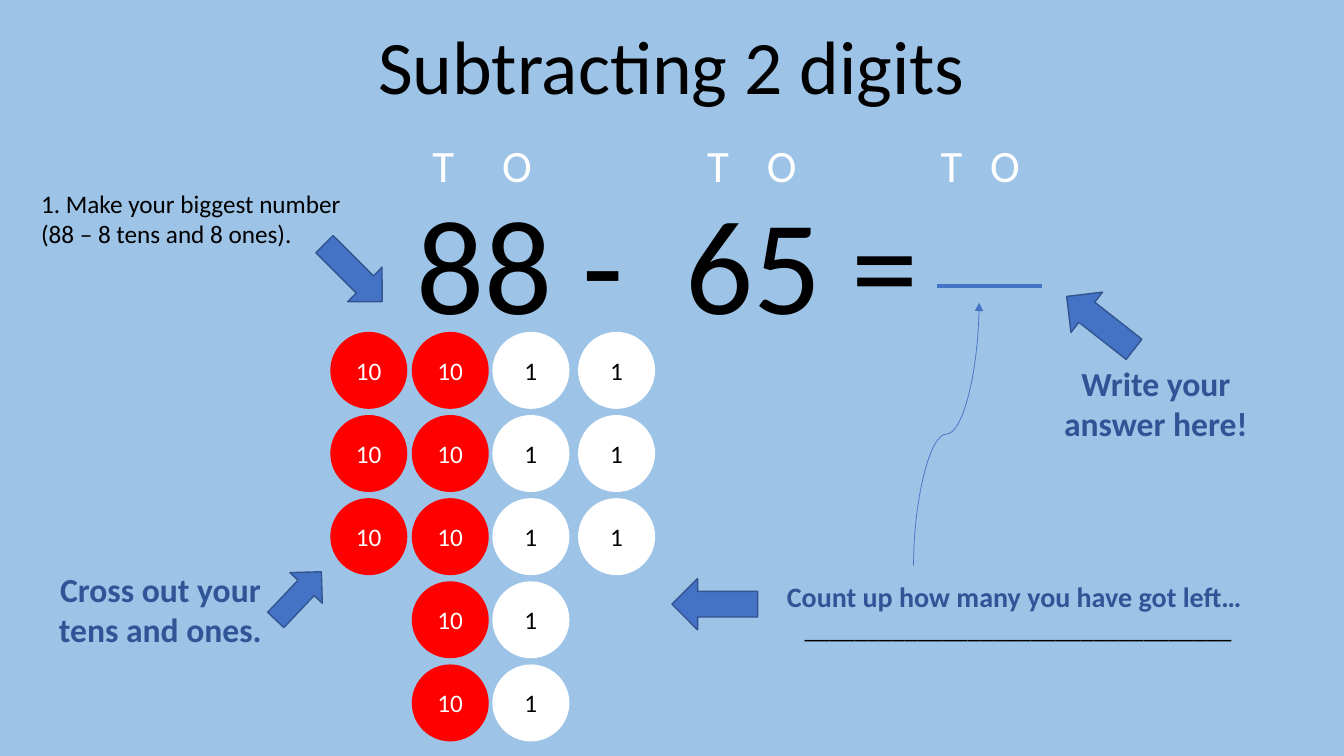
from dataclasses import dataclass

from lxml import etree
from pptx import Presentation, util as u
from pptx.dml.color import RGBColor
from pptx.enum import shapes, text
from pptx.oxml.ns import qn

COLORS = {
    "sky": "9DC3E6", "black": "000000", "white": "FFFFFF", "red": "FF0000",
    "blue": "4472C4", "outline": "325491", "navy": "2F5597",
}
FONT = "Calibri"
CELL = u.Inches(13.33) / 16  # the slide is a grid of 16 columns and 9 rows


@dataclass
class Box:
    """A region in grid cells; inner() places a part relative to it."""
    left: float
    top: float
    width: float
    height: float

    def inner(self, left, top, width, height):
        return Box(self.left + left, self.top + top, width, height)

    def lengths(self):
        return [cells(n) for n in (self.left, self.top, self.width, self.height)]


def cells(count):
    return u.Emu(round(count * CELL))


def color(name):
    return RGBColor.from_string(COLORS[name])


def style_paragraph(paragraph, size, ink="black", bold=False, centred=False):
    if centred:
        paragraph.alignment = text.PP_ALIGN.CENTER
    for run in paragraph.runs:
        run.font.name = FONT
        run.font.size = u.Pt(size)
        run.font.bold = bold
        run.font.color.rgb = color(ink)


def add_text(slide, box, words, size, wrap=True, **style):
    frame = slide.shapes.add_textbox(*box.lengths()).text_frame
    frame.word_wrap = wrap
    frame.auto_size = text.MSO_AUTO_SIZE.SHAPE_TO_FIT_TEXT
    frame.text = words
    for paragraph in frame.paragraphs:
        style_paragraph(paragraph, size, **style)
    return frame


def set_tabs(paragraph, stops):
    tab_list = etree.SubElement(paragraph._p.get_or_add_pPr(), qn("a:tabLst"))
    for stop in stops:
        etree.SubElement(tab_list, qn("a:tab"), pos=str(cells(stop)), algn="l")


def add_filled(slide, kind, box, fill, line):
    shape = slide.shapes.add_shape(kind, *box.lengths())
    shape.shadow.inherit = False
    shape.fill.solid()
    shape.fill.fore_color.rgb = color(fill)
    shape.line.color.rgb = color(line)
    shape.line.width = u.Pt(1)
    return shape


def add_line(slide, kind, start, end, width):
    line = slide.shapes.add_connector(kind, *[cells(n) for n in (*start, *end)])
    line.line.color.rgb = color("blue")
    line.line.width = u.Pt(width)
    etree.SubElement(line._element.spPr, qn("a:effectLst"))
    return line


def add_title(slide, box):
    add_text(slide, box, "Subtracting 2 digits", 54, wrap=False, centred=True)


def add_sum(slide, box):
    # Sum and the space for its answer
    frame = add_text(slide, box.inner(0, 0.5, 6.54, 2.06), "88 -\t65 =", 96)
    set_tabs(frame.paragraphs[0], [3.2])
    answer_top = box.top + 1.83
    add_line(slide, shapes.MSO_CONNECTOR.STRAIGHT,
             (box.left + 6.32, answer_top), (box.left + 7.57, answer_top), 3)
    # Tens and ones headings
    frame = add_text(slide, box.inner(0.19, 0, 8.62, 0.77),
                     "T\tO\tT\tO\tT\tO", 32, ink="white")
    set_tabs(frame.paragraphs[0], [0.83, 3.27, 3.98, 6.05, 6.64])


def add_counters(slide, box):
    diameter, row_pitch = 0.9, 0.99
    columns = [  # left, label, count, fill, ink
        (0, "10", 3, "red", "white"),
        (0.97, "10", 5, "red", "white"),
        (1.93, "1", 5, "white", "black"),
        (2.95, "1", 3, "white", "black"),
    ]
    for left, label, count, fill, ink in columns:
        for row in range(count):
            place = box.inner(left, row * row_pitch, diameter, diameter)
            counter = add_filled(slide, shapes.MSO_SHAPE.OVAL, place, fill, fill)
            frame = counter.text_frame
            frame.text = label
            frame.vertical_anchor = text.MSO_ANCHOR.MIDDLE
            style_paragraph(frame.paragraphs[0], 18, ink, centred=True)


def add_step(slide, box, words, size, arrow, place, rotation=0, **style):
    pointer = add_filled(slide, arrow, box.inner(*place), "blue", "outline")
    pointer.rotation = rotation
    return add_text(slide, box, words, size, **style)


def add_count_step(slide, box):
    words = "Count up how many you have got left…\n" + "_" * 34
    frame = add_step(slide, box, words, 20, shapes.MSO_SHAPE.LEFT_ARROW,
                     (-0.98, 0.05, 1.02, 0.61), ink="navy", bold=True)
    heading, blank = frame.paragraphs
    style_paragraph(blank, 18)
    for paragraph, indent in ((heading, 0.27), (blank, 0.48)):
        paragraph._p.get_or_add_pPr().set("marL", str(cells(indent)))
    # Curve up to the answer: a flipped connector turned a quarter
    curve = add_line(slide, shapes.MSO_CONNECTOR.CURVE,
                     (box.left + 3.85, box.top - 1.28),
                     (box.left + 0.72, box.top - 2.06), 0.5)
    properties = curve._element.spPr
    properties.find(qn("a:xfrm")).set("rot", str(90 * 60000))
    etree.SubElement(properties.find(qn("a:ln")), qn("a:tailEnd"), type="triangle")


def add_steps(slide):
    right, left = shapes.MSO_SHAPE.RIGHT_ARROW, shapes.MSO_SHAPE.LEFT_ARROW
    callout = {"ink": "navy", "bold": True, "centred": True}
    add_step(slide, Box(0.37, 2.18, 4.14, 0.85),
             "1. Make your biggest number (88 – 8 tens and 8 ones).", 18,
             right, (3.35, 0.78, 0.97, 0.58), 44.9)
    add_step(slide, Box(0.4, 6.71, 3.02, 1.09), "Cross out your tens and ones.", 24,
             right, (2.76, 0.12, 0.79, 0.53), 313.4, **callout)
    add_count_step(slide, Box(8.98, 6.84, 5.93, 0.89))
    add_step(slide, Box(12.25, 4.26, 3.02, 1.09), "Write your answer here!", 24,
             left, (0.34, -0.72, 1.02, 0.61), 38.1, **callout)


def main():
    presentation = Presentation()
    presentation.slide_width = u.Inches(13.33)
    presentation.slide_height = u.Inches(7.5)
    slide = presentation.slides.add_slide(presentation.slide_layouts[6])
    slide.background.fill.solid()
    slide.background.fill.fore_color.rgb = color("sky")
    add_title(slide, Box(4.34, 0.16, 7.31, 1.21))
    add_sum(slide, Box(4.84, 1.58, 8.81, 2.56))
    add_counters(slide, Box(3.94, 3.96, 3.85, 4.86))
    add_steps(slide)
    presentation.save("out.pptx")


if __name__ == "__main__":
    main()
